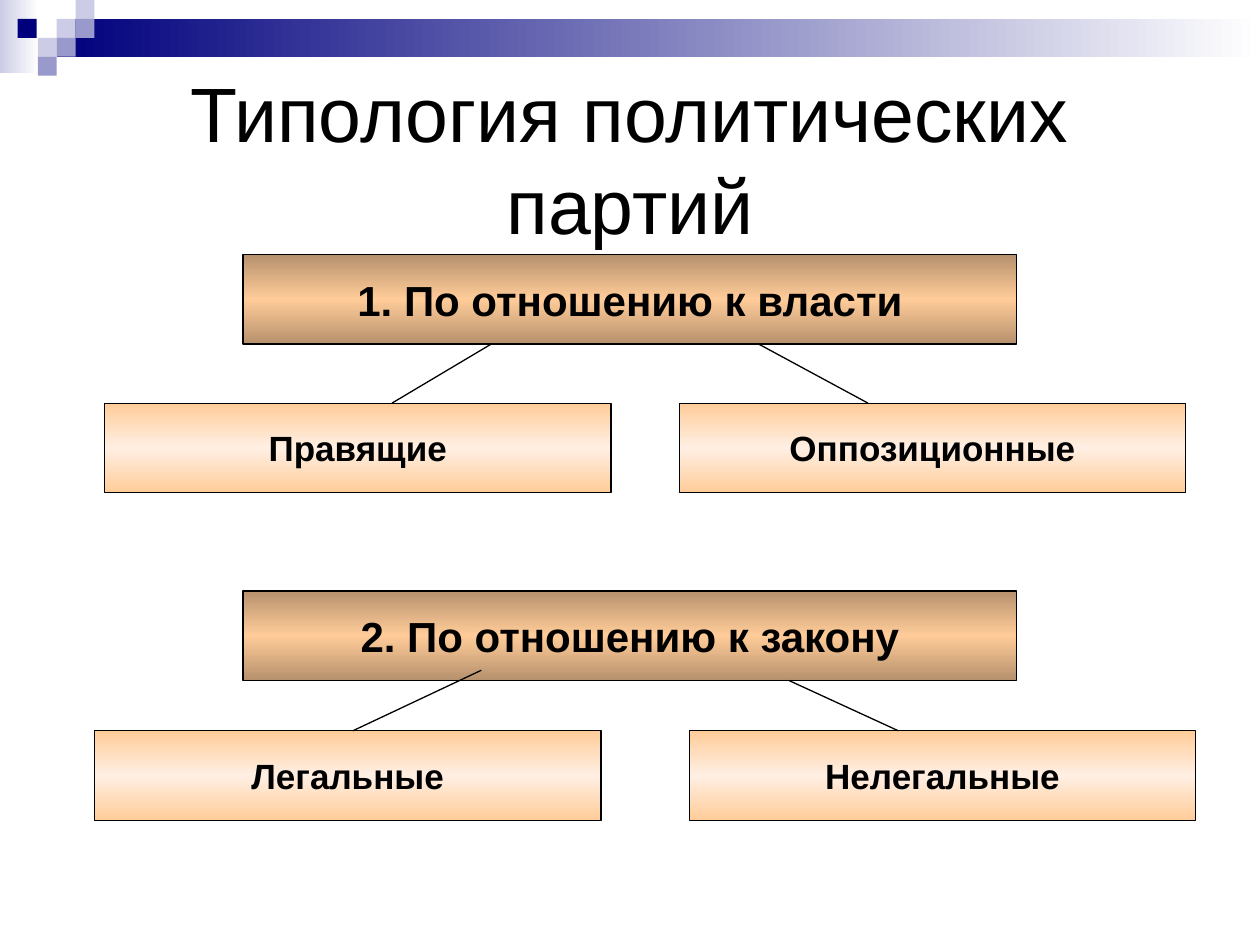
from typing import NamedTuple, Optional

from lxml.etree import SubElement
from pptx import Presentation
from pptx.dml.color import RGBColor
from pptx.enum.shapes import MSO_CONNECTOR, MSO_SHAPE
from pptx.enum.text import MSO_ANCHOR, PP_ALIGN
from pptx.oxml.ns import qn
from pptx.util import Inches, Pt

BLACK = RGBColor(0x00, 0x00, 0x00)
WHITE = RGBColor(0xFF, 0xFF, 0xFF)
NAVY = RGBColor(0x00, 0x00, 0x7D)
LILAC = RGBColor(0xCC, 0xCC, 0xE6)
VIOLET = RGBColor(0x99, 0x99, 0xCC)
PEACH = RGBColor(0xFF, 0xCC, 0x99)
FONT = "Arial"
BOX_HEIGHT = 0.71
SQUARE = 0.15


class Stop(NamedTuple):
    position: int
    color: RGBColor
    change: Optional[str] = None  # "shade" or "tint"
    amount: int = 0


class Box(NamedTuple):
    text: str
    left: float
    top: float


class Line(NamedTuple):
    start: tuple[float, float]
    end: tuple[float, float]


class BoxStyle(NamedTuple):
    width: float
    size: int
    stops: list[Stop]


HEADING = BoxStyle(6.14, 24, [
    Stop(0, PEACH, "shade", 46275), Stop(50, PEACH), Stop(100, PEACH, "shade", 46275)])
BRANCH = BoxStyle(4.02, 20, [
    Stop(0, PEACH), Stop(50, PEACH, "tint", 33725), Stop(100, PEACH)])

HEADINGS = [
    Box("1. По отношению к власти", 1.93, 2.02),
    Box("2. По отношению к закону", 1.93, 4.69),
]
BRANCHES = [
    Box("Правящие", 0.83, 3.2),
    Box("Оппозиционные", 5.39, 3.2),
    Box("Нелегальные", 5.47, 5.8),
    Box("Легальные", 0.75, 5.8),
]
LINES = [
    Line((3.9, 2.73), (3.11, 3.2)),
    Line((6.02, 2.73), (6.89, 3.2)),
    Line((3.82, 5.32), (2.8, 5.8)),
    Line((6.26, 5.4), (7.13, 5.8)),
]
BANDS = [
    (0, 0, 0.31, 0.58, LILAC),
    (0.45, 0.15, 9.55, 0.3, NAVY),
]
SQUARES = [
    (0.45, 0.15, LILAC), (0.6, 0, LILAC), (0.6, 0.15, VIOLET), (0.3, 0.3, LILAC),
    (0.14, 0.15, NAVY), (0.45, 0.3, VIOLET), (0.3, 0.45, VIOLET),
]


def add_rectangle(page, left: float, top: float, width: float, height: float):
    shape = page.shapes.add_shape(
        MSO_SHAPE.RECTANGLE, Inches(left), Inches(top), Inches(width), Inches(height))
    shape.shadow.inherit = False
    shape.line.fill.background()
    return shape


def fill_gradient(shape, stops: list[Stop], angle: int) -> None:
    shape.fill.gradient()
    shape.fill.gradient_angle = angle
    stop_list = shape._element.spPr.find(qn("a:gradFill")).find(qn("a:gsLst"))
    for old_stop in list(stop_list):
        stop_list.remove(old_stop)
    for stop in stops:
        entry = SubElement(stop_list, qn("a:gs"), pos=str(stop.position * 1000))
        color = SubElement(entry, qn("a:srgbClr"), val=str(stop.color))
        if stop.change:
            SubElement(color, qn(f"a:{stop.change}"), val=str(stop.amount))


def write_text(shape, text: str, size: int, bold: bool, wrap: bool) -> None:
    frame = shape.text_frame
    frame.word_wrap = wrap
    frame.vertical_anchor = MSO_ANCHOR.MIDDLE
    para = frame.paragraphs[0]
    para.alignment = PP_ALIGN.CENTER
    span = para.add_run()
    span.text = text
    span.font.name = FONT
    span.font.size = Pt(size)
    span.font.bold = bold
    span.font.color.rgb = BLACK


def add_box(page, box: Box, style: BoxStyle) -> None:
    shape = add_rectangle(page, box.left, box.top, style.width, BOX_HEIGHT)
    fill_gradient(shape, style.stops, 270)
    shape.line.color.rgb = BLACK
    shape.line.width = Pt(0.75)
    write_text(shape, box.text, style.size, bold=True, wrap=False)


def add_line(page, line: Line) -> None:
    points = [Inches(value) for value in (*line.start, *line.end)]
    connector = page.shapes.add_connector(MSO_CONNECTOR.STRAIGHT, *points)
    connector.line.color.rgb = BLACK
    connector.line.width = Pt(0.75)
    SubElement(connector._element.spPr, qn("a:effectLst"))


def main() -> None:
    deck = Presentation()
    deck.slide_width, deck.slide_height = Inches(10), Inches(7.5)
    page = deck.slides.add_slide(deck.slide_layouts[6])

    # Decorative header
    for left, top, width, height, color in BANDS:
        band = add_rectangle(page, left, top, width, height)
        fill_gradient(band, [Stop(0, color), Stop(100, WHITE)], 0)
    for left, top, color in SQUARES:
        square = add_rectangle(page, left, top, SQUARE, SQUARE)
        square.fill.solid()
        square.fill.fore_color.rgb = color

    # Title
    title = page.shapes.add_textbox(Inches(0.5), Inches(0.5), Inches(9), Inches(1.5))
    write_text(title, "Типология политических партий", 44, bold=False, wrap=True)

    # Classification boxes and their links
    for box in HEADINGS:
        add_box(page, box, HEADING)
    for box in BRANCHES:
        add_box(page, box, BRANCH)
    for line in LINES:
        add_line(page, line)

    deck.save("out.pptx")


if __name__ == "__main__":
    main()
